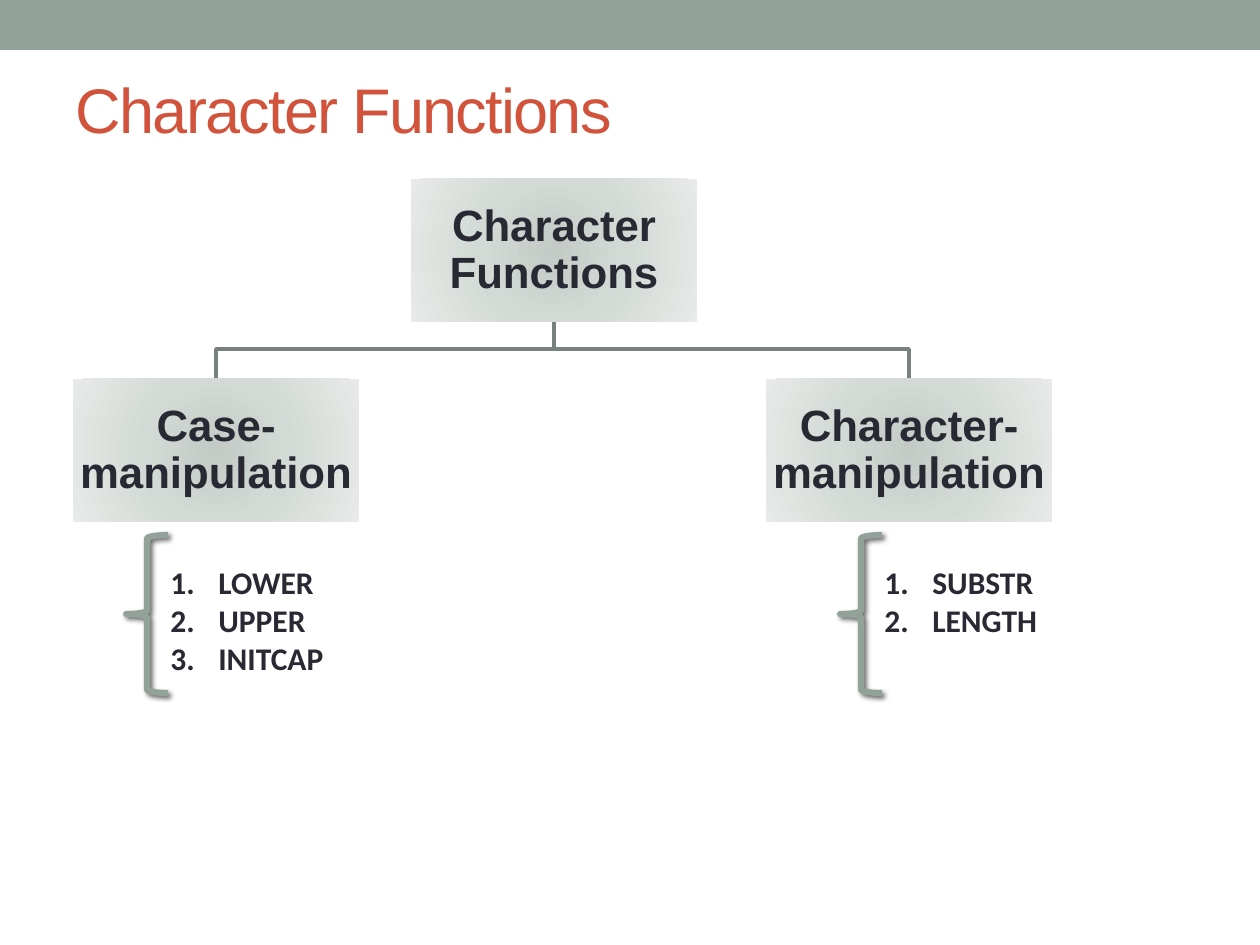
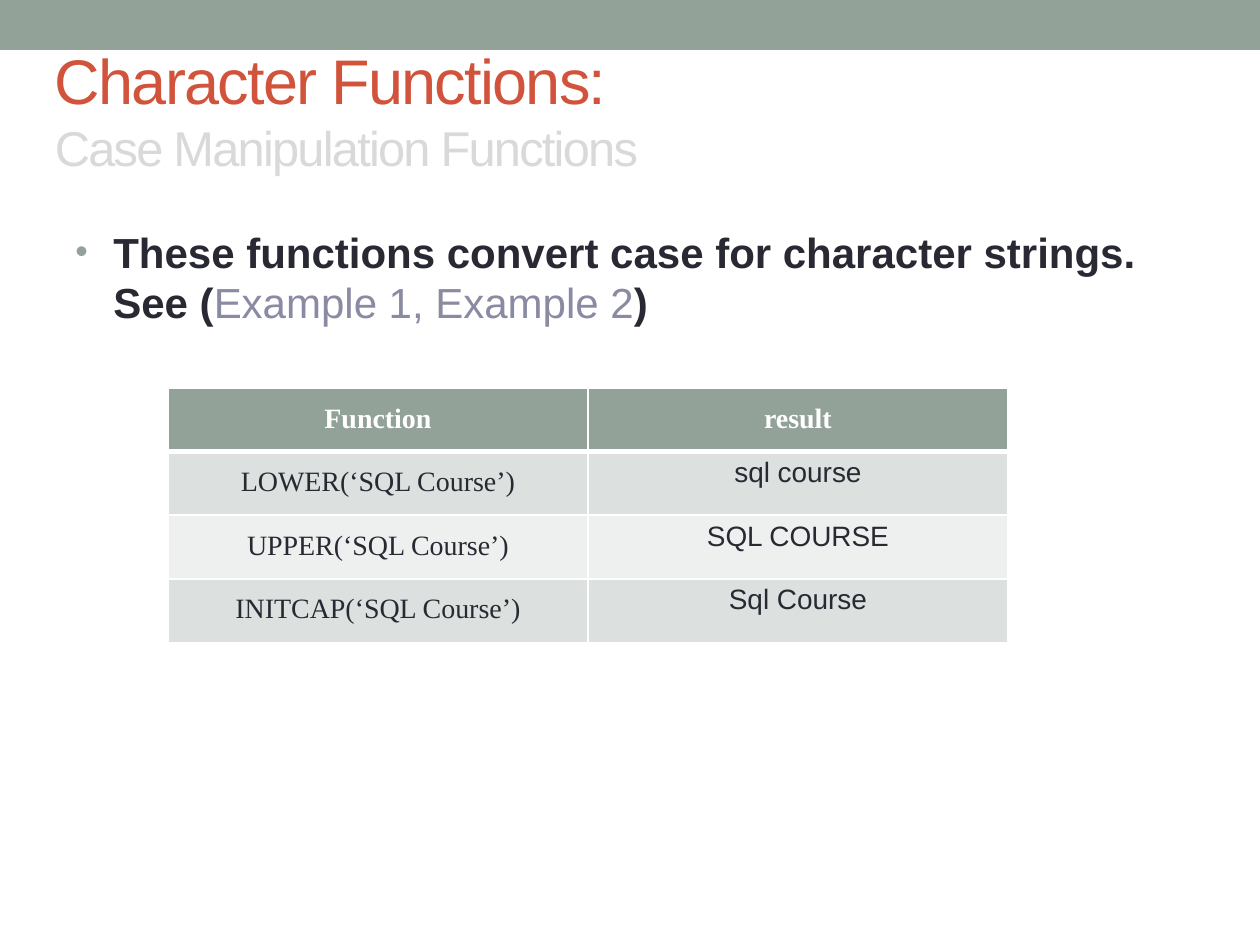
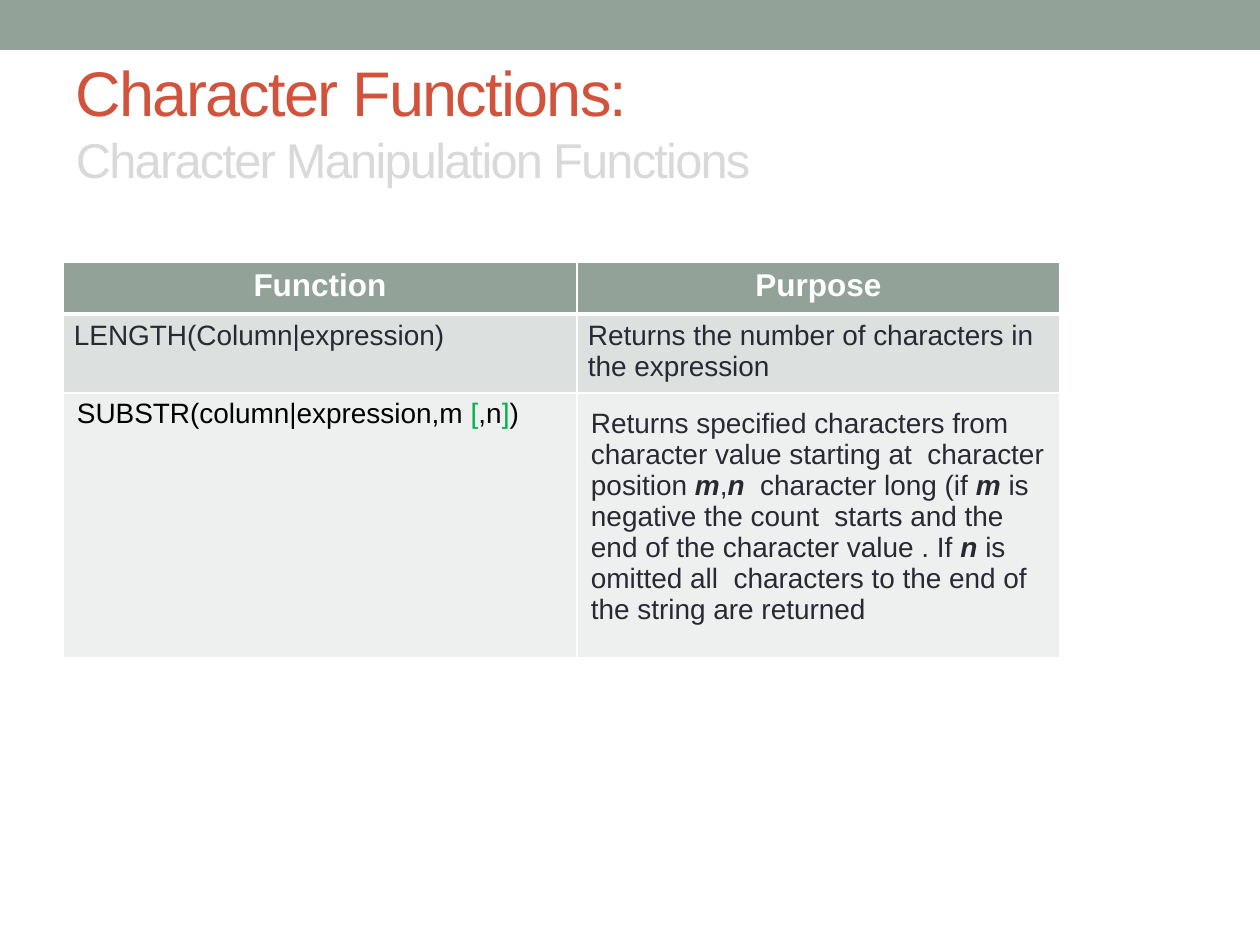
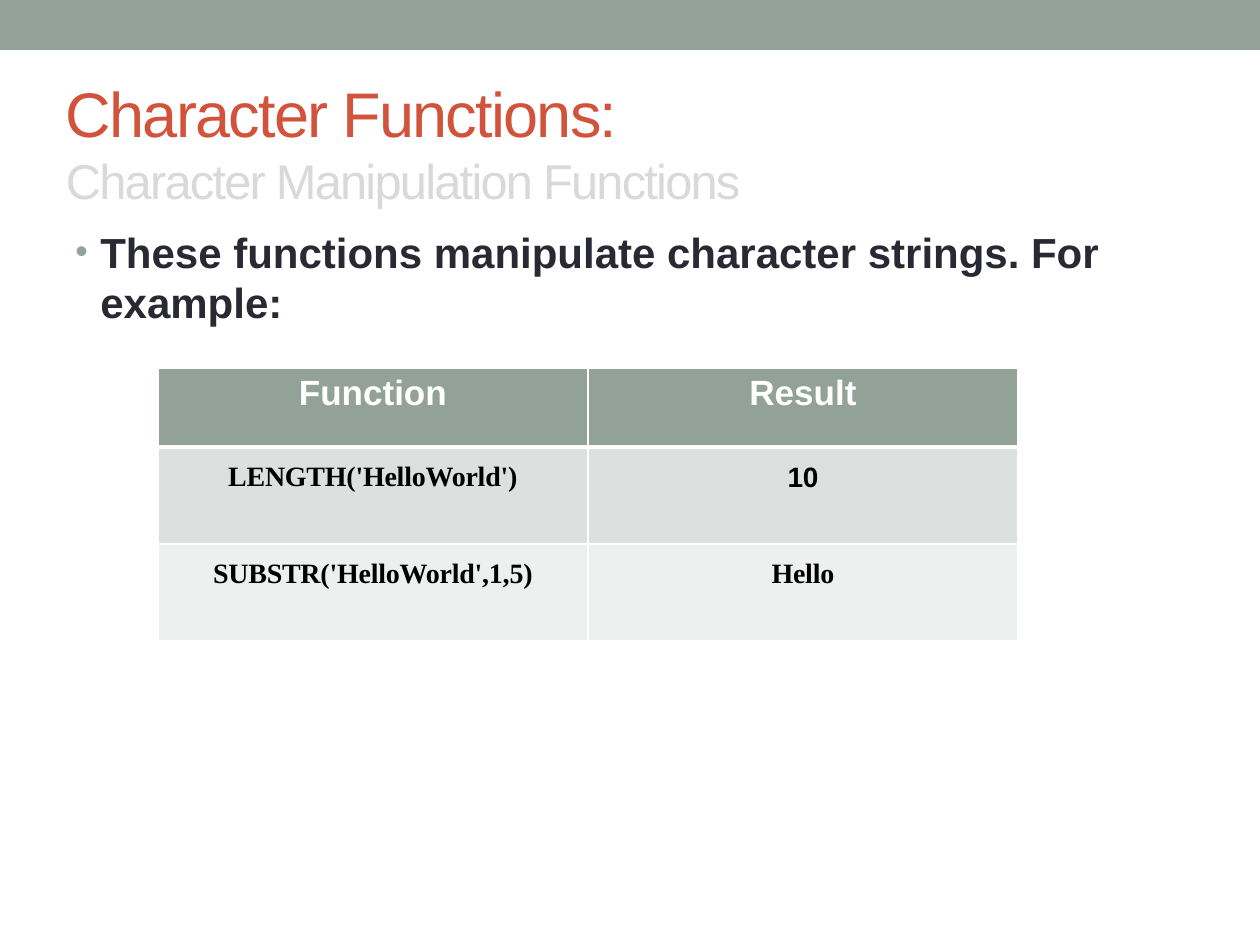
from lxml.etree import SubElement
from pptx import Presentation
from pptx.dml.color import RGBColor
from pptx.enum.shapes import MSO_SHAPE as Shape
from pptx.enum.text import MSO_ANCHOR as Anchor, PP_ALIGN as Align
from pptx.oxml.ns import qn
from pptx.util import Pt

SCALE = 914400 / 126
SAGE, RUST, INK, PALE, WHITE = "93A299", "D2533C", "292934", "D9D9D9", "FFFFFF"
LINK, GREEN, BLACK, WIRE = "8A8AA3", "00B050", "000000", "76827B"
STRIPES = "DCE0DE", "EEF0EF"
GLOW = (0, "C4CAC6"), (45, "D3DAD6"), (100, "E7EAE8")
SERIF = "Times New Roman"


def px(*nums):
    return [round(n * SCALE) for n in nums]


def hue(code):
    return RGBColor.from_string(code)


def node(parent, tag, **attrs):
    return SubElement(parent, qn(tag), {k: str(v) for k, v in attrs.items()})


class Deck:
    """Hold the shared style and the current slide, and draw each kind of element."""

    def __init__(self):
        self.prs = Presentation()
        self.prs.slide_width, self.prs.slide_height = px(1260, 945)

    def slide(self):
        self.page = self.prs.slides.add_slide(self.prs.slide_layouts[6])
        self.shapes = self.page.shapes
        band = self.shape(Shape.RECTANGLE, 0, 0, 1260, 50)
        band.fill.solid()
        band.fill.fore_color.rgb = hue(SAGE)
        band.line.fill.background()

    def shape(self, kind, *box):
        item = self.shapes.add_shape(kind, *px(*box))
        item.shadow.inherit = False
        return item

    def style(self, run, size, color=INK, bold=False, face="Arial", italic=False, space=0):
        font = run.font
        font.size, font.name, font.bold, font.italic = Pt(size), face, bold, italic
        font.color.rgb = hue(color)
        if space:
            run._r.get_or_add_rPr().set("spc", str(space))

    def fill(self, para, parts, **base):
        for part in [parts] if isinstance(parts, str) else parts:
            text, extra = (part, {}) if isinstance(part, str) else part
            run = para.add_run()
            run.text = text
            self.style(run, **{**base, **extra})

    def inset(self, item, side, top, foot=None):
        item.margin_left, item.margin_top, item.margin_right, item.margin_bottom = px(
            side, top, side, top if foot is None else foot)

    def frame(self, *box):
        frame = self.shapes.add_textbox(*px(*box)).text_frame
        frame.word_wrap = True
        return frame

    def title(self, box, head, sub="", drop=6):
        frame = self.frame(*box)
        frame.vertical_anchor = Anchor.MIDDLE
        self.inset(frame, 13, 6, drop)
        para = frame.paragraphs[0]
        para.text = f"{head}\v{sub}" if sub else head
        for run, size, color in zip(para.runs, (36, 27.9), (RUST, PALE)):
            self.style(run, size, color, space=-100)

    def hang(self, para, indent):
        props = para._p.get_or_add_pPr()
        step = px(indent)[0]
        props.set("marL", str(step))
        props.set("indent", str(-step))
        return props

    def bullet(self, parts, indent):
        para = self.frame(63, 220, 1134, 672).paragraphs[0]
        para.space_before = Pt(4.8)
        props = self.hang(para, indent)
        node(node(props, "a:buClr"), "a:srgbClr", val=SAGE)
        node(props, "a:buSzPct", val=85000)
        node(props, "a:buFont", typeface="Arial")
        node(props, "a:buChar", char="•")
        self.fill(para, parts, size=24, bold=True)

    def steps(self, x, y, names):
        frame = self.frame(x, y, 325, 14 + 38 * len(names))
        frame.text = "\n".join(names)
        for para in frame.paragraphs:
            node(self.hang(para, 48), "a:buAutoNum", type="arabicPeriod")
            self.style(para.runs[0], 18, bold=True, face="Calibri")

    def block(self, x, y, w, h, text):
        item = self.shape(Shape.RECTANGLE, x, y, w, h)
        grad = node(item._element.spPr, "a:gradFill", rotWithShape=1)
        item._element.spPr.find(qn("a:prstGeom")).addnext(grad)
        stops = node(grad, "a:gsLst")
        for pos, color in GLOW:
            node(node(stops, "a:gs", pos=pos * 1000), "a:srgbClr", val=color)
        node(node(grad, "a:path", path="circle"), "a:fillToRect",
             l=100000, t=100000, r=100000, b=100000)
        item.line.fill.background()
        frame = item.text_frame
        frame.word_wrap = True
        frame.vertical_anchor = Anchor.MIDDLE
        self.inset(frame, 2, 2)
        frame.text = text
        para = frame.paragraphs[0]
        para.alignment, para.line_spacing = Align.CENTER, 0.9
        self.style(para.runs[0], 25, bold=True)

    def branch(self, x, y, bend, to_x, to_y):
        pen = self.shapes.build_freeform(x, y, scale=SCALE)
        pen.add_line_segments([(x, bend), (to_x, bend), (to_x, to_y)], close=False)
        item = pen.convert_to_shape()
        item.shadow.inherit = False
        item.fill.background()
        item.line.color.rgb, item.line.width = hue(WIRE), Pt(2.08)

    def brace(self, *box):
        item = self.shape(Shape.LEFT_BRACE, *box)
        item.fill.background()
        item.line.color.rgb, item.line.width = hue(SAGE), Pt(3.5)
        glow = node(item._element.spPr.find(qn("a:effectLst")), "a:outerShdw",
                    blurRad=Pt(3), dist=Pt(2), dir=45 * 60000, rotWithShape=0)
        node(node(glow, "a:srgbClr", val=BLACK), "a:alpha", val=60000)

    def edges(self, cell, row):
        props = cell._tc.get_or_add_tcPr()
        for side in "LRTB":
            thick = (row, side) in ((0, "B"), (1, "T"))
            line = node(props, f"a:ln{side}", w=Pt(3 if thick else 1))
            node(node(line, "a:solidFill"), "a:srgbClr", val=WHITE)

    def table(self, x, y, h, cols, rows):
        item = self.shapes.add_table(len(rows), len(cols), *px(x, y, sum(cols), h))
        self.grid = item.table
        for col, wide in zip(self.grid.columns, px(*cols)):
            col.width = wide
        for r, (row, high) in enumerate(zip(self.grid.rows, px(*rows))):
            row.height = high
            for cell in row.cells:
                self.edges(cell, r)
                cell.fill.solid()
                cell.fill.fore_color.rgb = hue(STRIPES[(r - 1) % 2] if r else SAGE)
        item.height = px(h)[0]

    def cell(self, row, col, parts, pad=(13, 6), align=Align.CENTER, **base):
        cell = self.grid.cell(row, col)
        self.inset(cell, *pad)
        para = cell.text_frame.paragraphs[0]
        para.alignment = align
        self.fill(para, parts, **base)
        return para

    def heads(self, names, **base):
        for col, name in enumerate(names):
            self.cell(0, col, name, color=WHITE, bold=True, **base)


def tree(deck):
    deck.slide()
    deck.title((63, 73, 1134, 136), "Character Functions", drop=72)
    wide, high, top, low = 286, 143, 179, 379
    root = 411
    kids = ((73, "Case-manipulation", 126, ("LOWER", "UPPER", "INITCAP")),
            (766, "Character-manipulation", 840, ("SUBSTR", "LENGTH")))
    for x, *_ in reversed(kids):
        deck.branch(root + wide // 2, top + high, 349, x + wide // 2, low)
    deck.block(root, top, wide, high, "Character Functions")
    for x, name, left, names in kids:
        deck.block(x, low, wide, high, name)
        deck.steps(left + 32, 557, names)
        deck.brace(left, 535, 42, 158)


def cases(deck):
    deck.slide()
    deck.title((42, 63, 1018, 158), "Character Functions:", "Case Manipulation Functions", 72)
    deck.bullet(["These functions convert case for character strings. See (",
                 ("Example 1, Example 2", dict(color=LINK, bold=False)), ")"], 38)
    deck.table(168, 388, 261, (420, 420), [52] * 4)
    deck.heads(("Function", "result"), size=16, face=SERIF, pad=(15, 15))
    pairs = ("LOWER", "sql course"), ("UPPER", "SQL COURSE"), ("INITCAP", "Sql Course")
    for row, (name, result) in enumerate(pairs, 1):
        deck.cell(row, 0, f"{name}(‘SQL Course’)", (15, 15), size=16, face=SERIF)
        deck.cell(row, 1, result, size=16)


def uses(deck):
    deck.slide()
    deck.title((63, 42, 998, 158), "Character Functions:", "Character Manipulation Functions")
    deck.table(63, 262, 398, (514, 483), [52] * 3)
    slim, deep = (11, 6), (14, 15)
    deck.heads(("Function", "Purpose"), size=18, pad=slim)
    deck.cell(1, 0, "LENGTH(Column|expression)", slim, Align.LEFT, size=16)
    deck.cell(1, 1, "Returns the number of characters in the expression",
              slim, Align.LEFT, size=16)
    green, strong = dict(color=GREEN), dict(bold=True, italic=True)
    para = deck.cell(2, 0, ["SUBSTR(column|expression,m ", ("[", green), ",n", ("]", green), ")"],
                     deep, Align.LEFT, size=16, color=BLACK)
    para.line_spacing = Pt(12)
    deck.cell(2, 1, [
        "Returns specified characters from character value starting at  character position ",
        ("m", strong), ",", ("n", strong), "  character long (if ", ("m", strong),
        " is negative the count  starts and the end of the character value . If ",
        ("n", strong), " is omitted all  characters to the end of the string are returned",
    ], deep, Align.LEFT, size=16)


def samples(deck):
    deck.slide()
    deck.title((53, 63, 1134, 158), "Character Functions:", "Character Manipulation Functions")
    deck.bullet("These functions manipulate character strings. For example:", 25)
    deck.table(158, 368, 273, (430, 430), (79, 97, 97))
    deck.heads(("Function", "Result"), size=20)
    rows = (("LENGTH('HelloWorld')", "10", "Arial"),
            ("SUBSTR('HelloWorld',1,5)", "Hello", SERIF))
    look = dict(pad=(15, 15), size=16, color=BLACK, bold=True, space=-10)
    for row, (call, result, face) in enumerate(rows, 1):
        deck.cell(row, 0, call, face=SERIF, **look)
        deck.cell(row, 1, result, face=face, **look)


def main():
    deck = Deck()
    for draw in (tree, cases, uses, samples):
        draw(deck)
    deck.prs.save("out.pptx")


if __name__ == "__main__":
    main()
